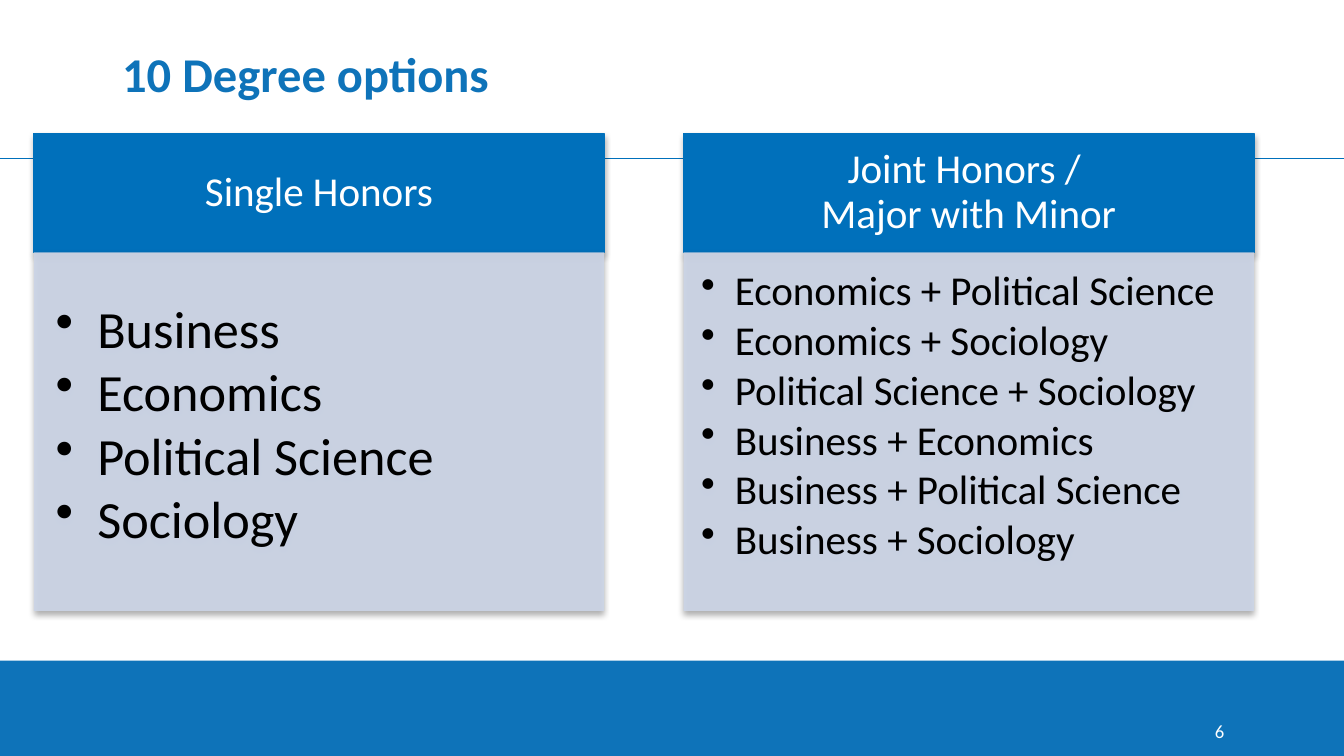
import pptx
import pptx.util
import pptx.oxml
import pptx.oxml.ns
import pptx.dml.color
import pptx.enum.shapes
import pptx.enum.text
from pptx.util import Cm, Pt

RGBColor = pptx.dml.color.RGBColor
Anchor = pptx.enum.text.MSO_ANCHOR
Align = pptx.enum.text.PP_ALIGN
RECTANGLE = pptx.enum.shapes.MSO_SHAPE.RECTANGLE

BLUE = RGBColor(0x0E, 0x73, 0xB9)
HEADER_BLUE = RGBColor(0x00, 0x70, 0xBB)
PALE_BLUE = RGBColor(0xCC, 0xD5, 0xE7)
WHITE = RGBColor(0xFF, 0xFF, 0xFF)
BLACK = RGBColor(0x00, 0x00, 0x00)
NAMESPACE = pptx.oxml.ns.nsdecls("a")
SHADOW = (
    f'<a:effectLst {NAMESPACE}><a:outerShdw blurRad="{Pt(3.1)}" dist="{Pt(1.8)}" '
    'dir="5400000" rotWithShape="0"><a:srgbClr val="000000"><a:alpha val="35000"/>'
    "</a:srgbClr></a:outerShdw></a:effectLst>"
)


def add_rectangle(left, top, width, height, color):
    shape = slide.shapes.add_shape(RECTANGLE, Cm(left), Cm(top), Cm(width), Cm(height))
    shape.fill.solid()
    shape.fill.fore_color.rgb = color
    shape.line.fill.background()
    shape.shadow.inherit = False
    return shape


def write(shape, text, size, color, alignment, anchor, insets=(0, 0, 0, 0), bold=False):
    """Fill a shape with text; insets are left, top, right, bottom in cm."""
    frame = shape.text_frame
    frame.word_wrap = True
    frame.vertical_anchor = anchor
    frame.margin_left, frame.margin_top, frame.margin_right, frame.margin_bottom = map(Cm, insets)
    frame.text = text
    for paragraph in frame.paragraphs:
        paragraph.alignment = alignment
        for run in paragraph.runs:
            run.font.name = "Calibri"
            run.font.size = Pt(size)
            run.font.bold = bold
            run.font.color.rgb = color


presentation = pptx.Presentation()
presentation.slide_width = Cm(25.4)
presentation.slide_height = Cm(14.29)
slide = presentation.slides.add_slide(presentation.slide_layouts[6])

# Rule, footer, page number and title
rule = slide.shapes.add_connector(
    pptx.enum.shapes.MSO_CONNECTOR.STRAIGHT, 0, Cm(3), Cm(25.4), Cm(3))
rule.line.color.rgb = HEADER_BLUE
rule.line.width = Pt(0.75)
rule._element.spPr.append(pptx.oxml.parse_xml(f"<a:effectLst {NAMESPACE}/>"))

add_rectangle(0, 12.49, 25.4, 1.8, BLUE)

page_number = slide.shapes.add_textbox(Cm(22.1), Cm(13.61), Cm(1.04), Cm(0.43))
write(page_number, "6", 10, WHITE, Align.RIGHT, Anchor.TOP)

title = slide.shapes.add_textbox(Cm(2.31), Cm(0.76), Cm(20.83), Cm(1.17))
write(title, "10 Degree options", 26, BLUE, Align.LEFT, Anchor.BOTTOM, bold=True)

# Two columns: left, heading, options, text size, anchor, insets, indent
columns = [
    (0.64, "Single Honors",
     ["Business", "Economics", "Political Science", "Sociology"],
     28, Anchor.MIDDLE, (0.41, 0.41, 0.56, 0.61), 0.79),
    (12.92, "Joint Honors / \vMajor with Minor",
     ["Economics + Political Science", "Economics + Sociology",
      "Political Science + Sociology", "Business + Economics",
      "Business + Political Science", "Business + Sociology"],
     22, Anchor.TOP, (0.33, 0.33, 0.43, 0.48), 0.64),
]
for left, heading, options, size, anchor, insets, indent in columns:
    header = add_rectangle(left, 2.52, 10.78, 2.25, HEADER_BLUE)
    header.line.color.rgb = HEADER_BLUE
    header.line.width = Pt(0.75)
    write(header, heading, 22, WHITE, Align.CENTER, Anchor.MIDDLE, (0.43, 0.25, 0.43, 0.25))
    header.text_frame.paragraphs[0].line_spacing = 0.9

    body = add_rectangle(left, 4.77, 10.78, 6.78, PALE_BLUE)
    fill_color = body._element.spPr.find(".//" + pptx.oxml.ns.qn("a:srgbClr"))
    fill_color.append(pptx.oxml.parse_xml(f'<a:alpha {NAMESPACE} val="90000"/>'))
    write(body, "\n".join(options), size, BLACK, Align.LEFT, anchor, insets)
    for paragraph in body.text_frame.paragraphs:
        paragraph.line_spacing = 0.9
        paragraph.space_after = Pt(round(size * 0.135, 1))
        properties = paragraph._p.get_or_add_pPr()
        properties.set("marL", str(Cm(indent)))
        properties.set("indent", str(-Cm(indent)))
        properties.append(pptx.oxml.parse_xml(f'<a:buChar {NAMESPACE} char="•"/>'))

    for shape in (header, body):
        properties = shape._element.spPr
        properties.replace(properties.find(pptx.oxml.ns.qn("a:effectLst")),
                           pptx.oxml.parse_xml(SHADOW))

presentation.save("out.pptx")
